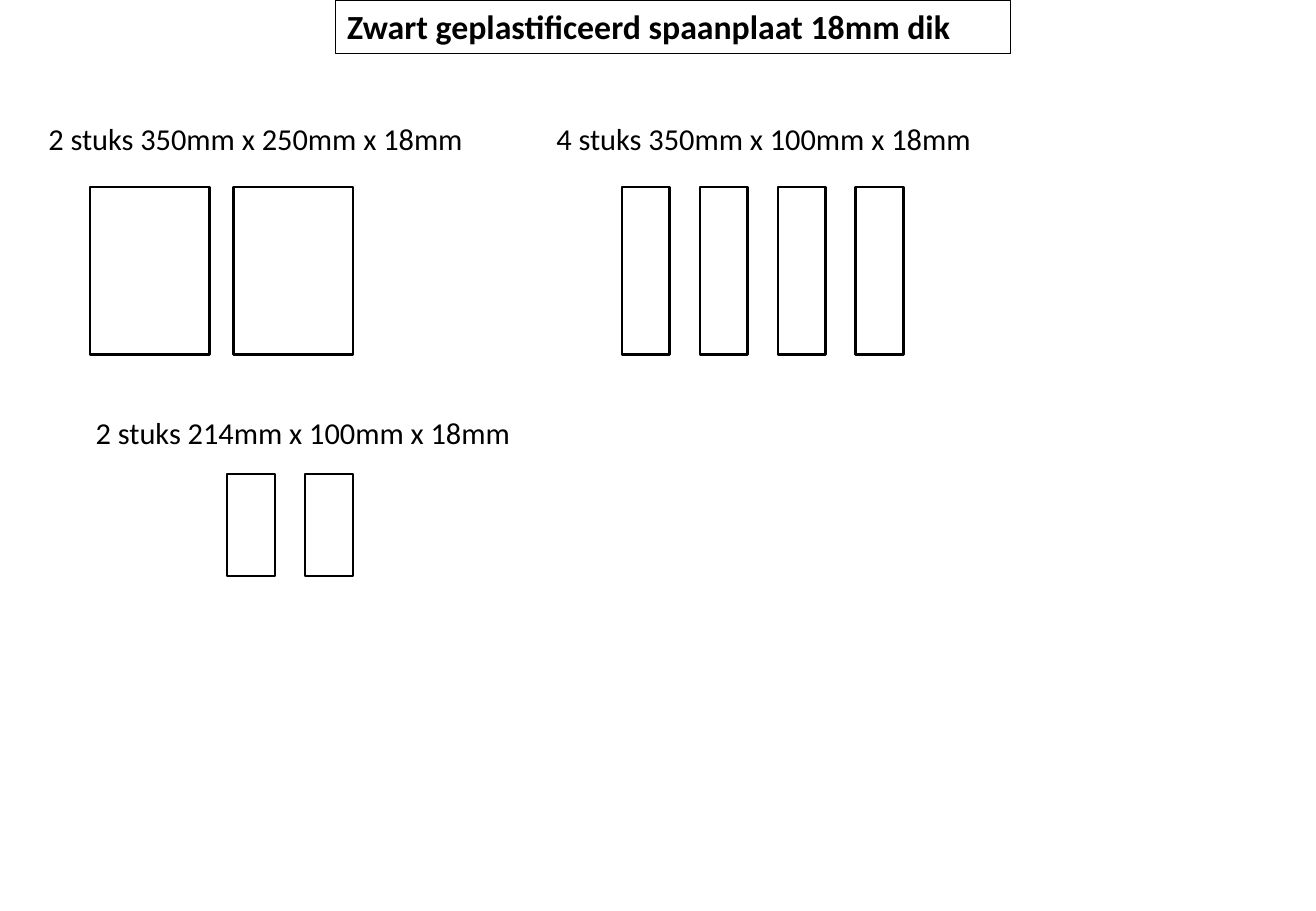
import pptx
import pptx.dml.color
import pptx.enum.shapes
import pptx.enum.text
import pptx.util

Cm = pptx.util.Cm
BLACK = "000000"
SCALE = 0.01
LABEL_WIDTH, LABEL_HEIGHT = 9.27, 1.02
PANEL_GROUPS = [
    {"count": 2, "length": 350, "width": 250, "label": (0.76, 2.39), "start": (1.88, 3.91), "pitch": 3},
    {"count": 4, "length": 350, "width": 100, "label": (11.38, 2.39), "start": (13, 3.91), "pitch": 1.63},
    {"count": 2, "length": 214, "width": 100, "label": (1.75, 8.53), "start": (4.75, 9.91), "pitch": 1.63},
]


def color(value):
    """Turn a hex string into a colour."""
    return pptx.dml.color.RGBColor.from_string(value)


def write_text(shape, text, size=18, bold=False, wrap=False):
    """Write one formatted, left-aligned line into a shape."""
    frame = shape.text_frame
    frame.word_wrap = wrap
    frame.auto_size = pptx.enum.text.MSO_AUTO_SIZE.SHAPE_TO_FIT_TEXT
    frame.vertical_anchor = pptx.enum.text.MSO_ANCHOR.TOP
    paragraph = frame.paragraphs[0]
    paragraph.alignment = pptx.enum.text.PP_ALIGN.LEFT
    run = paragraph.add_run()
    run.text = text
    run.font.name = "Calibri"
    run.font.size = pptx.util.Pt(size)
    run.font.bold = bold
    run.font.color.rgb = color(BLACK)


def add_rectangle(slide, left, top, width, height, line_width=1.5):
    """Add an unfilled rectangle with a black outline."""
    shape = slide.shapes.add_shape(
        pptx.enum.shapes.MSO_SHAPE.RECTANGLE, Cm(left), Cm(top), Cm(width), Cm(height)
    )
    shape.shadow.inherit = False
    shape.fill.background()
    shape.line.color.rgb = color(BLACK)
    shape.line.width = pptx.util.Pt(line_width)
    return shape


def add_panel_group(slide, count, length, width, label, start, pitch):
    """Add a size label and its row of panels drawn to scale."""
    left, top = label
    box = slide.shapes.add_textbox(Cm(left), Cm(top), Cm(LABEL_WIDTH), Cm(LABEL_HEIGHT))
    write_text(box, f"{count} stuks {length}mm x {width}mm x 18mm")
    left, top = start
    for index in range(count):
        add_rectangle(slide, left + index * pitch, top, width * SCALE, length * SCALE)


def main():
    """Build the cutting list slide and save it."""
    presentation = pptx.Presentation()
    presentation.slide_width = Cm(27.51)
    presentation.slide_height = Cm(19.05)
    slide = presentation.slides.add_slide(presentation.slide_layouts[6])
    title = add_rectangle(slide, 7.01, 0, 14.12, 1.12, line_width=0.5)
    write_text(title, "Zwart geplastificeerd spaanplaat 18mm dik", size=20, bold=True, wrap=True)
    for group in PANEL_GROUPS:
        add_panel_group(slide, **group)
    presentation.save("out.pptx")


if __name__ == "__main__":
    main()
